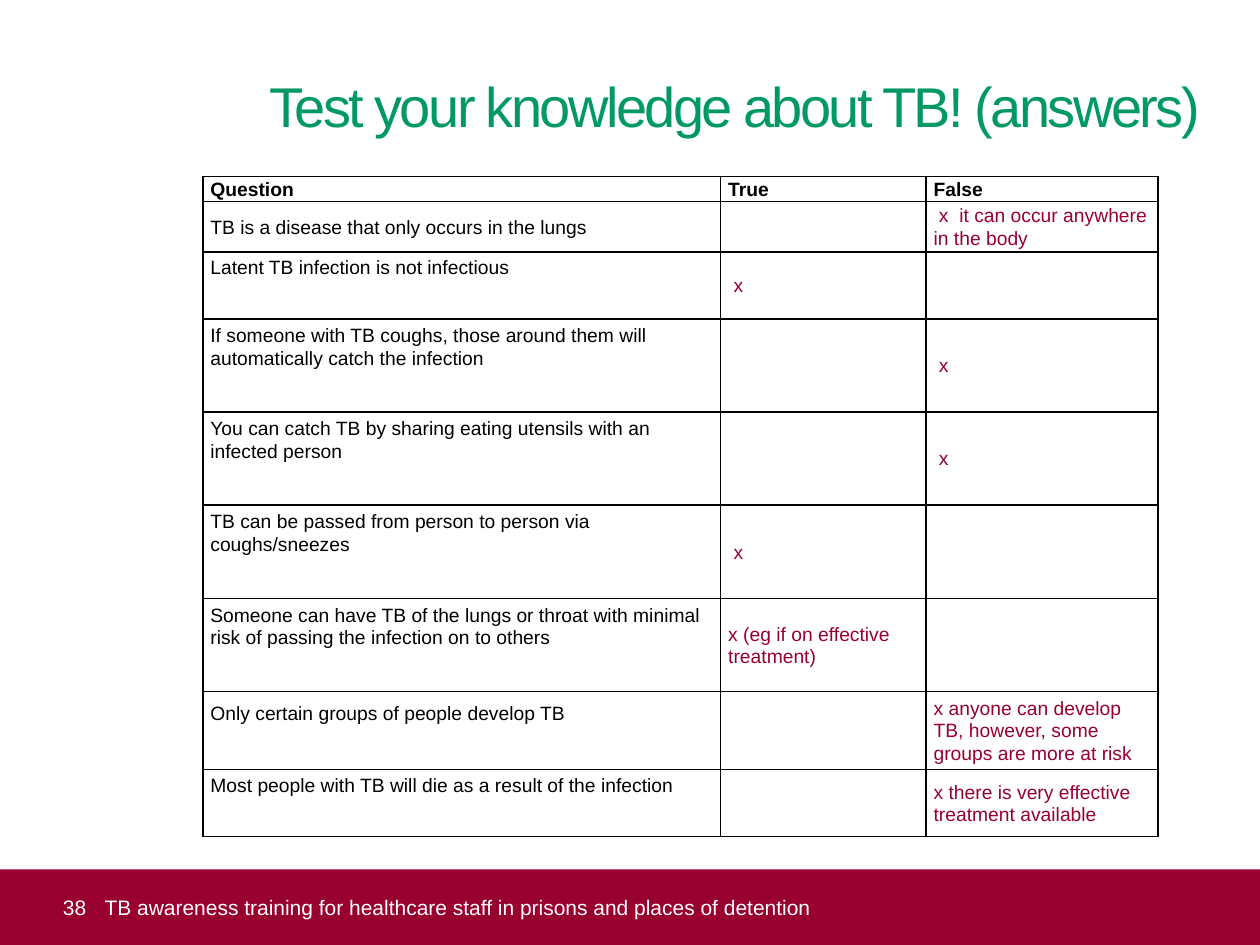
from pptx import Presentation
from pptx.dml.color import RGBColor
from pptx.enum.shapes import MSO_SHAPE
from pptx.enum.text import MSO_ANCHOR, PP_ALIGN
from pptx.oxml import parse_xml
from pptx.oxml.ns import nsdecls
from pptx.util import Inches, Pt

RECT = MSO_SHAPE.RECTANGLE
TOP, MIDDLE = MSO_ANCHOR.TOP, MSO_ANCHOR.MIDDLE
LEFT, CENTER = PP_ALIGN.LEFT, PP_ALIGN.CENTER
GREEN = RGBColor(0x00, 0x99, 0x66)
CRIMSON = RGBColor(0x98, 0x00, 0x2E)
WHITE = RGBColor(0xFF, 0xFF, 0xFF)
BLACK = RGBColor(0x00, 0x00, 0x00)


def write(tf, text, size, color, align=LEFT, bold=False):
    p = tf.paragraphs[0]
    p.alignment = align
    r = p.add_run()
    r.text = text
    r.font.color.rgb = color
    for name, value in {"name": "Arial", "size": Pt(size), "bold": bold}.items():
        setattr(r.font, name, value)
    return r


def set_frame(tf, anchor, left=0, top=0):
    frame = {
        "word_wrap": True,
        "vertical_anchor": anchor,
        "margin_left": Inches(left),
        "margin_top": Inches(top),
        "margin_right": 0,
        "margin_bottom": 0,
    }
    for name, value in frame.items():
        setattr(tf, name, value)


prs = Presentation()
prs.slide_width, prs.slide_height = Inches(10), Inches(7.5)
s = prs.slides.add_slide(prs.slide_layouts[6])

sp = s.shapes.add_textbox(Inches(2.09), Inches(0.52), Inches(7.48), Inches(0.66))
set_frame(sp.text_frame, TOP, top=0.05)
r = write(sp.text_frame, "Test your knowledge about TB! (answers)", 32, GREEN, CENTER)
r.font._element.set("spc", "-150")

sp = s.shapes.add_shape(RECT, 0, Inches(6.9), Inches(10), Inches(0.6))
sp.shadow.inherit = False
sp.fill.solid()
sp.fill.fore_color.rgb = CRIMSON
sp.line.fill.background()
set_frame(sp.text_frame, MIDDLE, left=0.5)
write(sp.text_frame, "38", 12, WHITE)

sp = s.shapes.add_textbox(Inches(0.83), Inches(6.9), Inches(8.58), Inches(0.6))
set_frame(sp.text_frame, MIDDLE)
footer = "TB awareness training for healthcare staff in prisons and places of detention"
write(sp.text_frame, footer, 12, WHITE)

rows = [
    (0.2, None, "Question", "True", "False"),
    (0.4, None, "TB is a disease that only occurs in the lungs", "", " x  it can occur anywhere in the body"),
    (0.53, 0.03, "Latent TB infection is not infectious", " x", ""),
    (0.74, 0.04, "If someone with TB coughs, those around them will automatically catch the infection", "", " x"),
    (0.74, 0.04, "You can catch TB by sharing eating utensils with an infected person", "", " x"),
    (0.74, 0.04, "TB can be passed from person to person via coughs/sneezes", " x", ""),
    (0.74, 0.04, "Someone can have TB of the lungs or throat with minimal risk of passing the infection on to others",
     "x (eg if on effective treatment)", ""),
    (0.62, 0.08, "Only certain groups of people develop TB", "",
     "x anyone can develop TB, however, some groups are more at risk"),
    (0.53, 0.03, "Most people with TB will die as a result of the infection", "",
     "x there is very effective treatment available"),
]
widths = [4.11, 1.63, 1.84]
table = s.shapes.add_table(
    len(rows), len(widths), Inches(1.61), Inches(1.4), Inches(sum(widths)), Inches(sum(row[0] for row in rows))
).table
for column, width in zip(table.columns, widths):
    column.width = Inches(width)

for i, (height, top, *texts) in enumerate(rows):
    table.rows[i].height = Inches(height)
    for j, text in enumerate(texts):
        cell = table.cell(i, j)
        question = j == 0 and top is not None
        cell.vertical_anchor = TOP if question else MIDDLE
        cell.margin_left = cell.margin_right = Inches(0.06)
        cell.margin_top = Inches(top if question else 0)
        cell.margin_bottom = 0
        tc_pr = cell._tc.get_or_add_tcPr()
        for side in ("lnL", "lnR", "lnT", "lnB"):
            tc_pr.append(parse_xml(
                f'<a:{side} {nsdecls("a")} w="{Pt(1)}"><a:solidFill>'
                f'<a:srgbClr val="{BLACK}"/></a:solidFill></a:{side}>'
            ))
        cell.fill.background()
        p = cell.text_frame.paragraphs[0]
        p.line_spacing = 1.06
        if text:
            write(cell.text_frame, text, 11, CRIMSON if i and j else BLACK, bold=i == 0)
        else:
            p.font.size = Pt(11)

prs.save("out.pptx")
